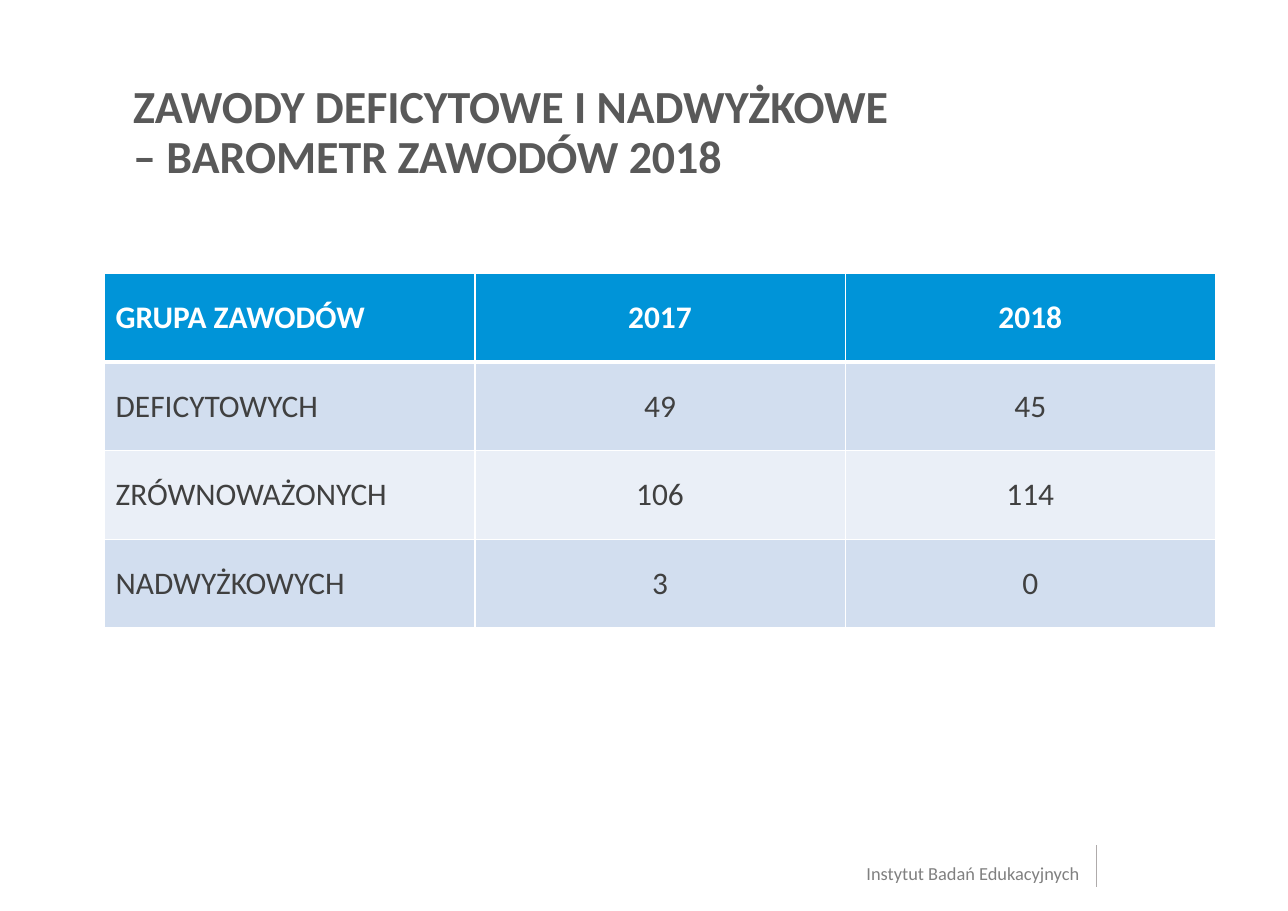
from dataclasses import dataclass

import pptx
import pptx.dml.color
import pptx.enum.shapes
import pptx.enum.text
import pptx.oxml.ns
import pptx.slide
import pptx.table
import pptx.text.text
import pptx.util
from lxml import etree

Cm = pptx.util.Cm
Pt = pptx.util.Pt
RGBColor = pptx.dml.color.RGBColor
Align = pptx.enum.text.PP_ALIGN
Anchor = pptx.enum.text.MSO_ANCHOR
qn = pptx.oxml.ns.qn

FONT = "Calibri"
WHITE = RGBColor(0xFF, 0xFF, 0xFF)
HEADER_BLUE = RGBColor(0x00, 0x94, 0xD8)
BAND_DARK = RGBColor(0xD2, 0xDE, 0xEF)
BAND_LIGHT = RGBColor(0xEA, 0xEF, 0xF7)
TITLE_GREY = RGBColor(0x59, 0x59, 0x59)
BODY_GREY = RGBColor(0x40, 0x40, 0x40)
FOOTER_GREY = RGBColor(0x80, 0x80, 0x80)
RULE_GREY = RGBColor(0xAF, 0xAB, 0xAB)

COLUMN_WIDTH = Cm(8.53)
ROW_HEIGHT = Cm(2.04)


@dataclass(frozen=True)
class TextStyle:
    size: float
    color: RGBColor
    bold: bool = False


@dataclass(frozen=True)
class Label:
    lines: tuple[str, ...]
    left: float
    top: float
    width: float
    height: float
    style: TextStyle
    line_spacing: float = 1.0


@dataclass(frozen=True)
class OccupationRow:
    cells: tuple[str, str, str]
    fill: RGBColor
    style: TextStyle
    top_border: float = 1
    bottom_border: float = 1


HEADER_STYLE = TextStyle(20.5, WHITE, bold=True)
BODY_STYLE = TextStyle(20.5, BODY_GREY)

LABELS = (
    Label(("ZAWODY DEFICYTOWE I NADWYŻKOWE", "– BAROMETR ZAWODÓW 2018"),
          3.07, 1.93, 25.58, 2.16, TextStyle(30, TITLE_GREY, bold=True), 0.9),
    Label(("Instytut Badań Edukacyjnych",),
          19.96, 19.86, 5.1, 0.53, TextStyle(12, FOOTER_GREY)),
)

ROWS = (
    OccupationRow(("GRUPA ZAWODÓW", "2017", "2018"), HEADER_BLUE, HEADER_STYLE,
                  bottom_border=3),
    OccupationRow(("DEFICYTOWYCH", "49", "45"), BAND_DARK, BODY_STYLE, top_border=3),
    OccupationRow(("ZRÓWNOWAŻONYCH", "106", "114"), BAND_LIGHT, BODY_STYLE),
    OccupationRow(("NADWYŻKOWYCH", "3", "0"), BAND_DARK, BODY_STYLE),
)


def style_paragraph(paragraph: pptx.text.text._Paragraph, style: TextStyle) -> None:
    paragraph.font.name = FONT
    paragraph.font.size = Pt(style.size)
    paragraph.font.bold = style.bold
    paragraph.font.color.rgb = style.color


def add_label(slide: pptx.slide.Slide, label: Label) -> None:
    box = slide.shapes.add_textbox(
        Cm(label.left), Cm(label.top), Cm(label.width), Cm(label.height))
    frame = box.text_frame
    frame.word_wrap = True
    frame.margin_left = frame.margin_right = frame.margin_top = frame.margin_bottom = 0
    paragraph = frame.paragraphs[0]
    for index, line in enumerate(label.lines):
        if index:
            paragraph.add_line_break()
        paragraph.add_run().text = line
    paragraph.line_spacing = label.line_spacing
    style_paragraph(paragraph, label.style)


def add_borders(cell: pptx.table._Cell, top: float, bottom: float) -> None:
    """Draw white borders; must run before the cell gets its fill."""
    properties = cell._tc.get_or_add_tcPr()
    for side, width in (("L", 1), ("R", 1), ("T", top), ("B", bottom)):
        border = etree.SubElement(properties, qn(f"a:ln{side}"), w=str(Pt(width)))
        fill = etree.SubElement(border, qn("a:solidFill"))
        etree.SubElement(fill, qn("a:srgbClr"), val=str(WHITE))


def add_occupation_table(slide: pptx.slide.Slide) -> None:
    column_count = len(ROWS[0].cells)
    table = slide.shapes.add_table(
        len(ROWS), column_count, Cm(2.41), Cm(6.3),
        COLUMN_WIDTH * column_count, ROW_HEIGHT * len(ROWS)).table
    for column in table.columns:
        column.width = COLUMN_WIDTH
    for row_index, row in enumerate(ROWS):
        table.rows[row_index].height = ROW_HEIGHT
        for column_index, text in enumerate(row.cells):
            cell = table.cell(row_index, column_index)
            add_borders(cell, row.top_border, row.bottom_border)
            cell.fill.solid()
            cell.fill.fore_color.rgb = row.fill
            cell.vertical_anchor = Anchor.MIDDLE
            cell.text = text
            paragraph = cell.text_frame.paragraphs[0]
            paragraph.alignment = Align.CENTER if column_index else Align.LEFT
            style_paragraph(paragraph, row.style)


def add_footer_rule(slide: pptx.slide.Slide) -> None:
    rule = slide.shapes.add_connector(
        pptx.enum.shapes.MSO_CONNECTOR.STRAIGHT,
        Cm(25.25), Cm(20.42), Cm(25.25), Cm(19.46))
    rule.line.color.rgb = RULE_GREY
    rule.line.width = Pt(0.5)
    etree.SubElement(rule._element.spPr, qn("a:effectLst"))


def main() -> None:
    presentation = pptx.Presentation()
    presentation.slide_width = Cm(29.67)
    presentation.slide_height = Cm(20.98)
    slide = presentation.slides.add_slide(presentation.slide_layouts[6])
    add_footer_rule(slide)
    for label in LABELS:
        add_label(slide, label)
    add_occupation_table(slide)
    presentation.save("out.pptx")


if __name__ == "__main__":
    main()
